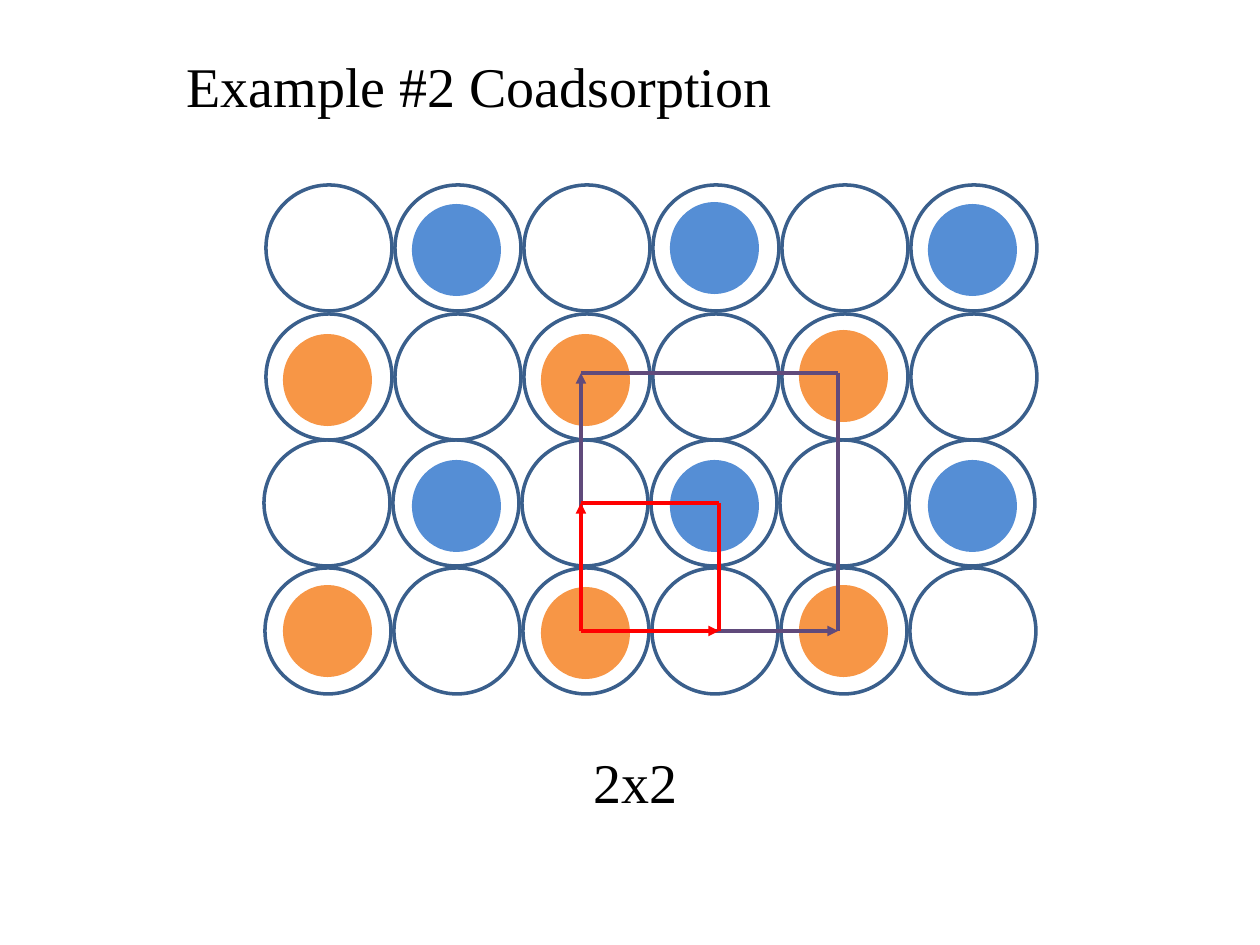
import pptx
import pptx.util
import pptx.dml.color
import pptx.enum.shapes
import pptx.enum.text
import pptx.oxml.ns
import lxml.etree

PX = 914400 // 126
COLORS = {"text": "000000", "substrate": "3A5F8C", "blue": "558ED5",
          "orange": "F79646", "supercell": "604A7B", "unit_cell": "FF0000"}
RGB = {name: pptx.dml.color.RGBColor.from_string(value) for name, value in COLORS.items()}
LINE_WIDTH = pptx.util.Pt(2)

prs = pptx.Presentation()
prs.slide_width, prs.slide_height = pptx.util.Inches(10), pptx.util.Inches(7.5)
slide = prs.slides.add_slide(prs.slide_layouts[5])
shapes = slide.shapes


def add_circle(left, top, width, height):
    circle = shapes.add_shape(pptx.enum.shapes.MSO_SHAPE.OVAL,
                              left * PX, top * PX, width * PX, height * PX)
    circle.shadow.inherit = False
    return circle


def add_cell_edge(start, end, color, arrow):
    edge = shapes.add_connector(pptx.enum.shapes.MSO_CONNECTOR.STRAIGHT,
                                *(value * PX for value in start + end))
    edge.line.color.rgb = color
    edge.line.width = LINE_WIDTH
    qn = pptx.oxml.ns.qn
    if arrow:
        lxml.etree.SubElement(edge.line._get_or_add_ln(), qn("a:tailEnd"), type="triangle")
    lxml.etree.SubElement(edge._element.spPr, qn("a:effectLst"))


# Title and caption
title = shapes.title
caption = shapes.add_textbox(0, 0, PX, PX)
frame_format = {"word_wrap": False,
                "auto_size": pptx.enum.text.MSO_AUTO_SIZE.SHAPE_TO_FIT_TEXT,
                "vertical_anchor": pptx.enum.text.MSO_ANCHOR.TOP}
font_format = {"name": "Times New Roman", "size": pptx.util.Pt(32)}
for label, words, left, top, width in [(title, "Example #2 Coadsorption", 174, 45, 616),
                                       (caption, "2x2", 581, 741, 111)]:
    label.left, label.top, label.width, label.height = (
        left * PX, top * PX, width * PX, 81 * PX)
    label.text_frame.text = words
    for key, value in frame_format.items():
        setattr(label.text_frame, key, value)
    paragraph = label.text_frame.paragraphs[0]
    paragraph.alignment = pptx.enum.text.PP_ALIGN.LEFT
    font = paragraph.runs[0].font
    for key, value in font_format.items():
        setattr(font, key, value)
    font.color.rgb = RGB["text"]

# Substrate atoms: four rows of six
PITCH = 129
COLUMNS = 6
for row_left, row_top in [(266, 185), (266, 314), (264, 440), (265, 568)]:
    for column in range(COLUMNS):
        atom = add_circle(row_left + column * PITCH, row_top, 126, 126)
        atom.fill.background()
        atom.line.color.rgb = RGB["substrate"]
        atom.line.width = LINE_WIDTH

# Adsorbed atoms: every second site, shifted by one site from row to row
nudges = {(0, 3): -2, (1, 4): -4, (3, 2): 2}
adsorbate_rows = [(204, "blue", 1), (334, "orange", 0), (460, "blue", 1), (585, "orange", 0)]
for row, (row_top, species, first) in enumerate(adsorbate_rows):
    for column in range(first, COLUMNS, 2):
        top = row_top + nudges.get((row, column), 0)
        adsorbate = add_circle(283 + column * PITCH, top, 89, 92)
        adsorbate.fill.solid()
        adsorbate.fill.fore_color.rgb = RGB[species]
        adsorbate.line.fill.background()

# Cells: two lattice vectors from a shared origin, closed by two plain edges
left, bottom = origin = (581, 631)
for cell, right, top in [("supercell", 838, 373), ("unit_cell", 719, 503)]:
    for start, end, arrow in [(origin, (right, bottom), True),
                              (origin, (left, top), True),
                              ((left, top), (right, top), False),
                              ((right, bottom), (right, top), False)]:
        add_cell_edge(start, end, RGB[cell], arrow)

prs.save("out.pptx")
